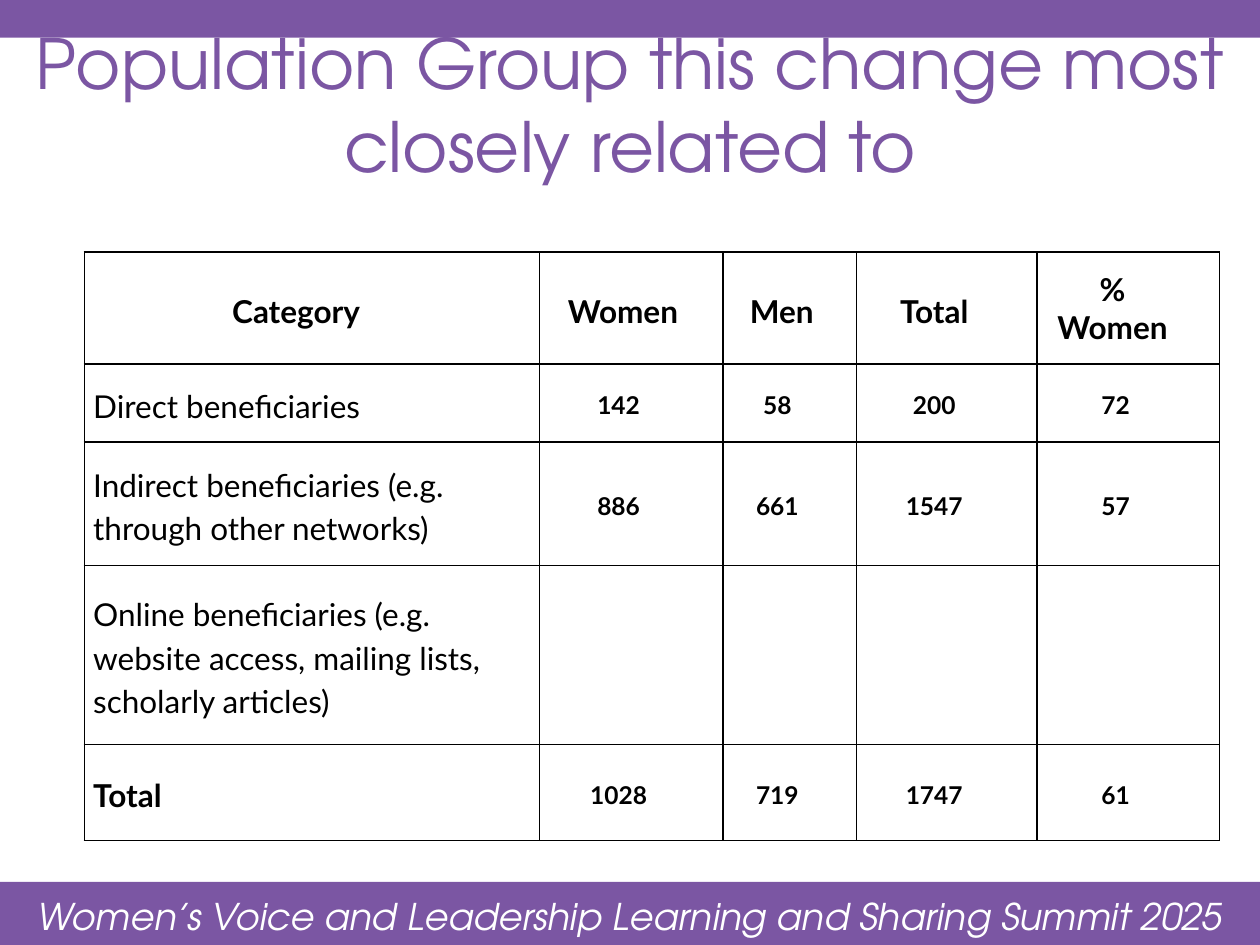
from lxml.etree import SubElement
from pptx import Presentation
from pptx.dml.color import RGBColor
from pptx.enum.shapes import MSO_SHAPE
from pptx.enum.text import MSO_ANCHOR, PP_ALIGN
from pptx.oxml.ns import qn
from pptx.util import Inches, Pt

TITLE = "Population Group this change most closely related to"
FOOTER = "Women’s Voice and Leadership Learning and Sharing Summit 2025"
ROWS = [
    ["Category", "Women", "Men", "Total", "%\nWomen"],
    ["Direct beneficiaries", "142", "58", "200", "72"],
    ["Indirect beneficiaries (e.g. through other networks)", "886", "661", "1547", "57"],
    ["Online beneficiaries (e.g. website access, mailing lists, scholarly articles)", "", "", "", ""],
    ["Total", "1028", "719", "1747", "61"],
]
COLORS = {"purple": "7B56A3", "white": "FFFFFF", "black": "000000"}
DISPLAY_FONT, TABLE_FONT = "TeX Gyre Adventor", "Lato"

WIDTH, HEIGHT = 10, 7.5
TOP_BAR, BOTTOM_BAR = 0.3, 0.5
COLUMN_WIDTHS = [3.61, 1.46, 1.06, 1.43, 1.45]
ROW_HEIGHTS = [0.89, 0.62, 0.98, 1.42, 0.76]
HEADER_RIGHT_MARGINS = [0.32, 0.2, 0.2, 0.27, 0.32]
CELL_MARGIN, NUMBER_RIGHT_MARGIN = 0.07, 0.27


def write_text(frame, text, *, font, size, color, bold=False, italic=False,
               align=PP_ALIGN.CENTER, spacing=1.0):
    frame.word_wrap = True
    for index, line in enumerate(text.split("\n")):
        paragraph = frame.add_paragraph() if index else frame.paragraphs[0]
        paragraph.alignment = align
        paragraph.line_spacing = spacing
        run = paragraph.add_run()
        run.text = line
        run.font.name = font
        run.font.size = Pt(size)
        run.font.bold = bold
        run.font.italic = italic
        run.font.color.rgb = RGBColor.from_string(COLORS[color])


def add_bar(slide, top, height):
    bar = slide.shapes.add_shape(MSO_SHAPE.RECTANGLE, 0, Inches(top),
                                 Inches(WIDTH), Inches(height))
    bar.shadow.inherit = False
    bar.fill.solid()
    bar.fill.fore_color.rgb = RGBColor.from_string(COLORS["purple"])
    bar.line.fill.background()


def style_cell(cell):
    """Give the cell black borders and no fill."""
    properties = cell._tc.get_or_add_tcPr()
    for side in ("lnL", "lnR", "lnT", "lnB"):
        border = SubElement(properties, qn(f"a:{side}"), w=str(Pt(1)))
        fill = SubElement(border, qn("a:solidFill"))
        SubElement(fill, qn("a:srgbClr"), val=COLORS["black"])
    cell.fill.background()


def add_beneficiary_table(slide):
    table = slide.shapes.add_table(
        len(ROWS), len(COLUMN_WIDTHS), Inches(0.67), Inches(2),
        Inches(sum(COLUMN_WIDTHS)), Inches(sum(ROW_HEIGHTS))).table
    table.first_row = table.horz_banding = False
    for column, width in zip(table.columns, COLUMN_WIDTHS):
        column.width = Inches(width)
    for row, height in zip(table.rows, ROW_HEIGHTS):
        row.height = Inches(height)

    for r, values in enumerate(ROWS):
        for c, value in enumerate(values):
            cell = table.cell(r, c)
            header, label = r == 0, c == 0
            if header:
                right = HEADER_RIGHT_MARGINS[c]
            else:
                right = CELL_MARGIN if label else NUMBER_RIGHT_MARGIN
            cell.margin_left, cell.margin_right = Inches(CELL_MARGIN), Inches(right)
            cell.margin_top = cell.margin_bottom = 0
            cell.vertical_anchor = MSO_ANCHOR.MIDDLE
            style_cell(cell)
            if value:
                write_text(
                    cell.text_frame, value, font=TABLE_FONT, color="black",
                    size=18 if header or label else 14,
                    bold=header or not label or r == len(ROWS) - 1,
                    align=PP_ALIGN.LEFT if label and not header else PP_ALIGN.CENTER,
                    spacing=1.0 if "\n" in value else 1.15)


def main():
    presentation = Presentation()
    presentation.slide_width, presentation.slide_height = Inches(WIDTH), Inches(HEIGHT)
    slide = presentation.slides.add_slide(presentation.slide_layouts[5])

    add_bar(slide, HEIGHT - BOTTOM_BAR, BOTTOM_BAR)
    add_bar(slide, 0, TOP_BAR)

    footer = slide.shapes.add_textbox(Inches(0.17), Inches(7.02), Inches(9.66), Inches(0.48))
    write_text(footer.text_frame, FOOTER, font=DISPLAY_FONT, size=21,
               color="white", italic=True, spacing=1.07)

    title = slide.shapes.title
    title.left, title.top = 0, Inches(0.36)
    title.width, title.height = Inches(WIDTH), Inches(0.92)
    title.text_frame.vertical_anchor = MSO_ANCHOR.MIDDLE
    write_text(title.text_frame, TITLE, font=DISPLAY_FONT, size=39.6, color="purple")

    add_beneficiary_table(slide)
    presentation.save("out.pptx")


if __name__ == "__main__":
    main()
